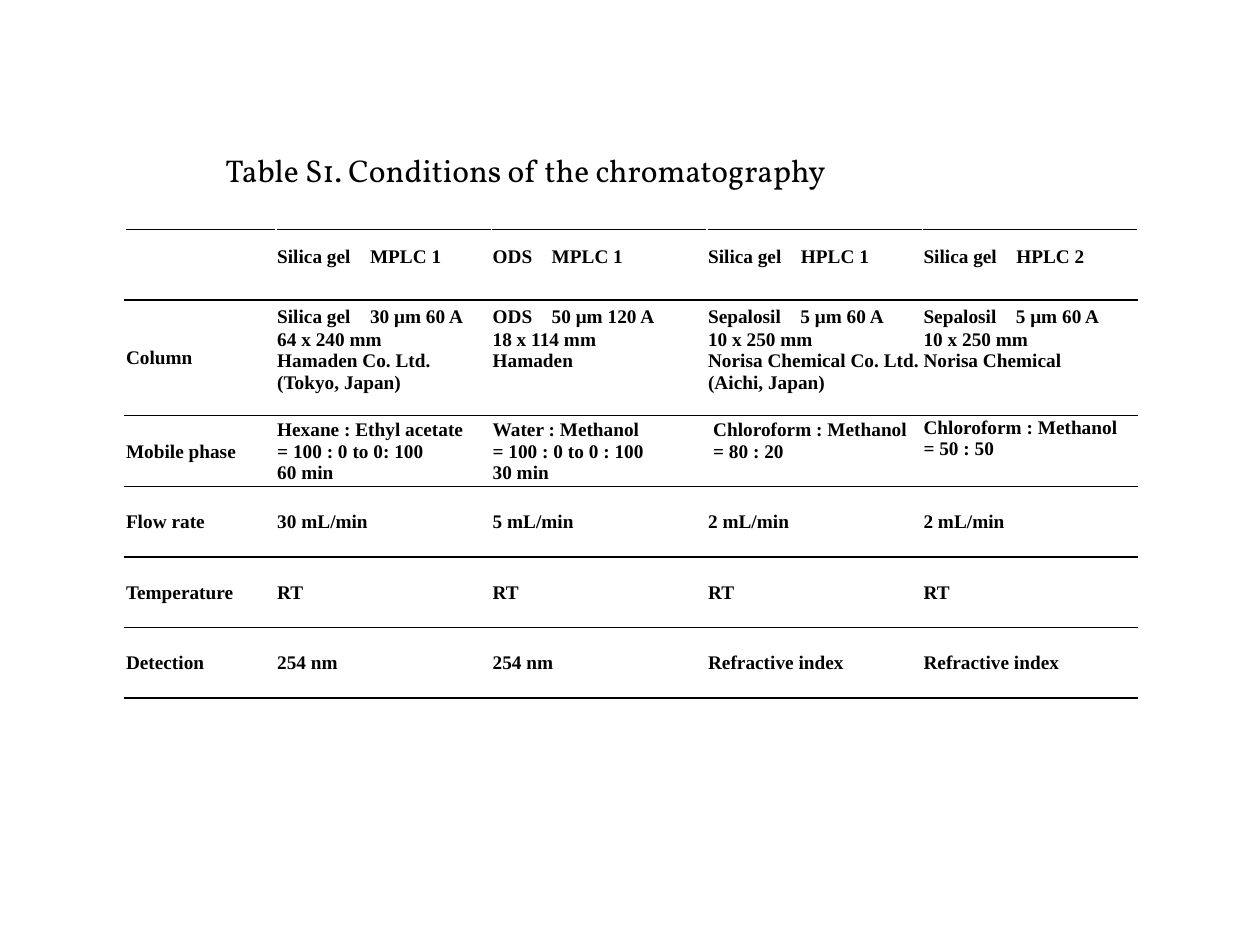
from dataclasses import dataclass

from lxml.etree import SubElement
from pptx import Presentation
from pptx.dml.color import RGBColor
from pptx.enum.text import MSO_ANCHOR as Anchor
from pptx.oxml.ns import qn
from pptx.util import Inches, Pt


@dataclass(frozen=True)
class Theme:
    ink: str = "000000"
    paper: str = "FFFFFF"
    title_font: str = "Vollkorn"
    title_size: float = 18
    table_font: str = "Times New Roman"
    table_size: float = 11
    rule_width: float = 1


THEME = Theme()

TITLE = "Table S1. Conditions of the chromatography"
CONDITIONS = [
    ["", "Silica gel　MPLC 1", "ODS　MPLC 1", "Silica gel　HPLC 1", "Silica gel　HPLC 2"],
    [
        "Column",
        "Silica gel　30 μm 60 A\n64 x 240 mm\nHamaden Co. Ltd. (Tokyo, Japan)",
        "ODS　50 μm 120 A\n18 x 114 mm\nHamaden",
        "Sepalosil　5 μm 60 A\n10 x 250 mm\nNorisa Chemical Co. Ltd. (Aichi, Japan)",
        "Sepalosil　5 μm 60 A\n10 x 250 mm\nNorisa Chemical",
    ],
    [
        "Mobile phase",
        "Hexane : Ethyl acetate\n= 100 : 0 to 0: 100\n60 min",
        "Water : Methanol\n= 100 : 0 to 0 : 100\n30 min",
        "Chloroform : Methanol\n= 80 : 20",
        "Chloroform : Methanol\n= 50 : 50",
    ],
    ["Flow rate", "30 mL/min", "5 mL/min", "2 mL/min", "2 mL/min"],
    ["Temperature", "RT", "RT", "RT", "RT"],
    ["Detection", "254 nm", "254 nm", "Refractive index", "Refractive index"],
]

COLUMN_WIDTHS = [1.2] + [1.71] * 4
ROW_HEIGHTS = [0.56, 0.92] + [0.56] * 4
TOP_ANCHORED = {(1, 1), (1, 2), (1, 3), (1, 4), (2, 4)}
BOTTOM_MARGINS = {(0, column): 0.17 for column in range(1, 5)} | {(2, 3): 0.17}
LEFT_MARGINS = {(2, 3): 0.05}
BORDERS = {"a:lnL": THEME.paper, "a:lnR": THEME.paper, "a:lnT": THEME.ink, "a:lnB": THEME.ink}


def style_runs(text_frame, font_name, size, bold):
    for paragraph in text_frame.paragraphs:
        for run in paragraph.runs:
            run.font.name = font_name
            run.font.size = Pt(size)
            run.font.bold = bold
            run.font.color.rgb = RGBColor.from_string(THEME.ink)


def add_title(slide):
    box = slide.shapes.add_textbox(Inches(1.69), Inches(1.15), Inches(6.85), Inches(0.4))
    box.text_frame.word_wrap = True
    box.text_frame.text = TITLE
    style_runs(box.text_frame, THEME.title_font, THEME.title_size, False)


def set_borders(cell):
    properties = cell._tc.get_or_add_tcPr()
    for tag, color in BORDERS.items():
        line = SubElement(properties, qn(tag), w=str(Pt(THEME.rule_width)))
        SubElement(SubElement(line, qn("a:solidFill")), qn("a:srgbClr"), val=color)


def fill_cell(cell, position, text):
    cell.text_frame.text = text
    style_runs(cell.text_frame, THEME.table_font, THEME.table_size, True)
    cell.vertical_anchor = Anchor.TOP if position in TOP_ANCHORED else Anchor.MIDDLE
    cell.margin_left = Inches(LEFT_MARGINS.get(position, 0.01))
    cell.margin_right = cell.margin_top = Inches(0.01)
    cell.margin_bottom = Inches(BOTTOM_MARGINS.get(position, 0))
    set_borders(cell)
    cell.fill.background()


def add_conditions_table(slide):
    table = slide.shapes.add_table(
        len(ROW_HEIGHTS), len(COLUMN_WIDTHS), Inches(0.99), Inches(1.82),
        Inches(sum(COLUMN_WIDTHS)), Inches(sum(ROW_HEIGHTS)),
    ).table
    table.first_row = table.horz_banding = False
    for column, width in zip(table.columns, COLUMN_WIDTHS):
        column.width = Inches(width)
    for row, height in zip(table.rows, ROW_HEIGHTS):
        row.height = Inches(height)
    for row_index, texts in enumerate(CONDITIONS):
        for column_index, text in enumerate(texts):
            fill_cell(table.cell(row_index, column_index), (row_index, column_index), text)


def main():
    presentation = Presentation()
    presentation.slide_width, presentation.slide_height = Inches(10), Inches(7.5)
    slide = presentation.slides.add_slide(presentation.slide_layouts[6])
    add_title(slide)
    add_conditions_table(slide)
    presentation.save("out.pptx")


if __name__ == "__main__":
    main()
